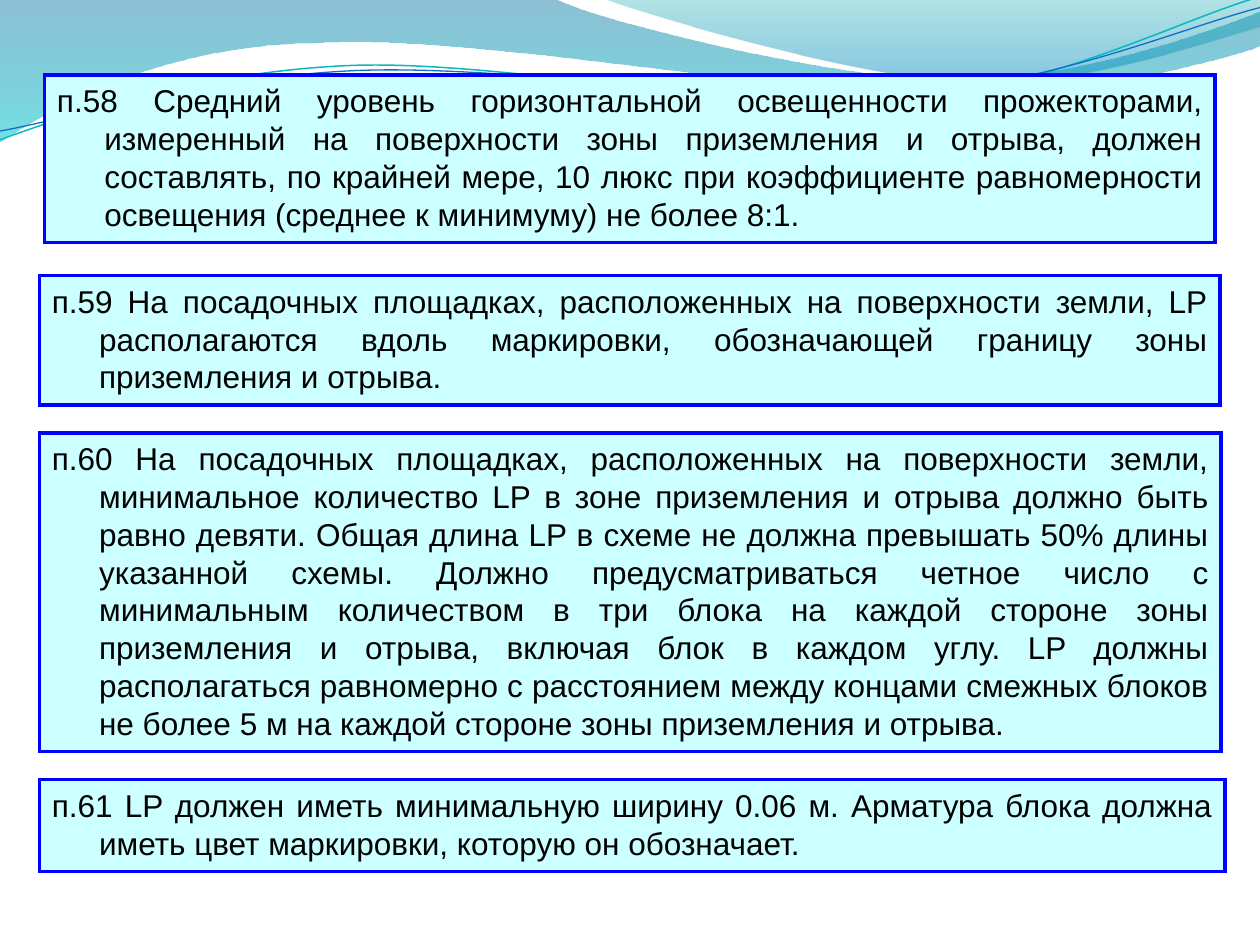
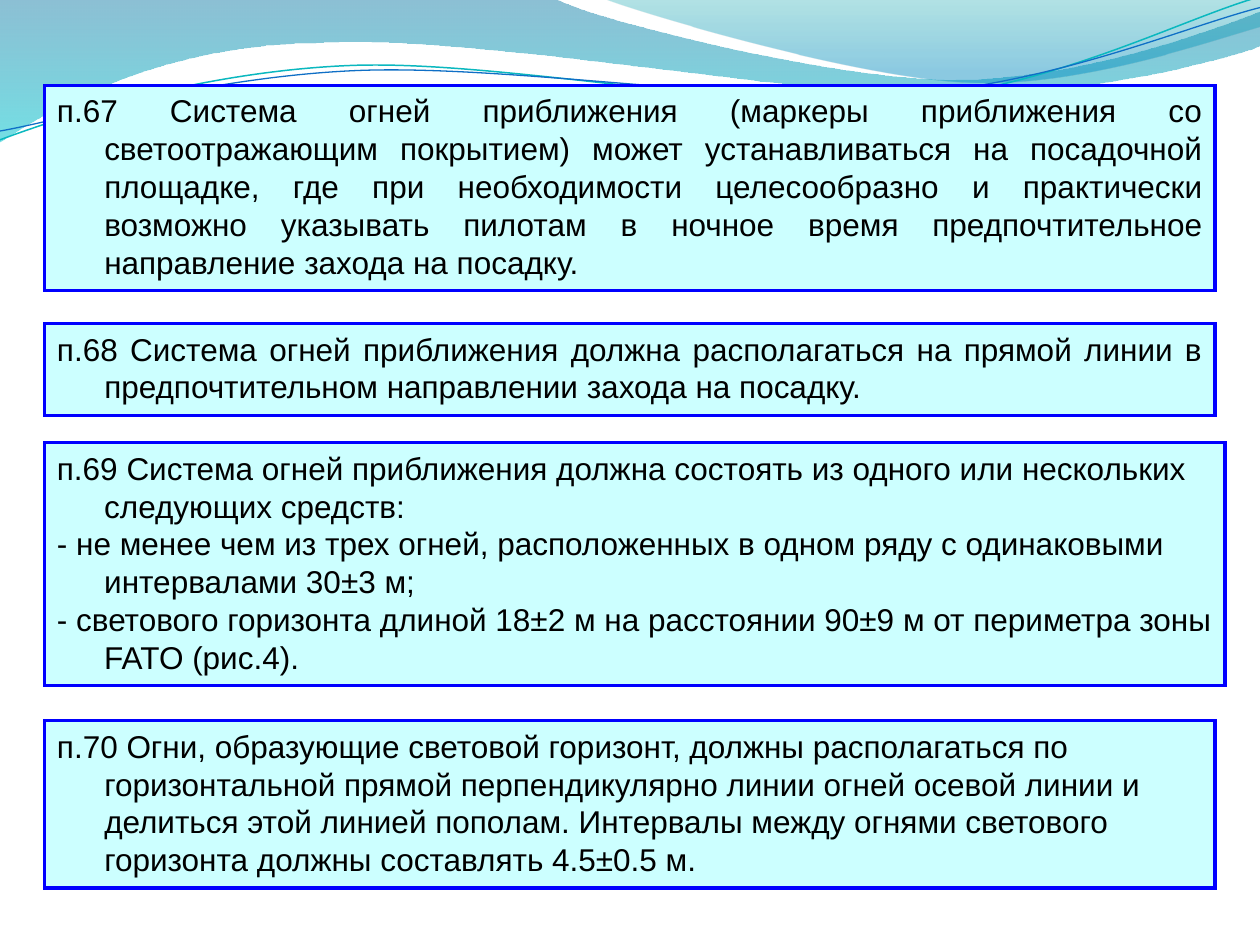
import math
from dataclasses import dataclass
from typing import Optional

from lxml import etree
from pptx import Presentation
from pptx import util as u
from pptx.dml.color import RGBColor
from pptx.enum import shapes, text
from pptx.oxml.ns import qn

SLIDE_WIDTH, SLIDE_HEIGHT = u.Inches(10), u.Inches(7.5)
COLUMN, ROW = SLIDE_WIDTH / 100, SLIDE_HEIGHT / 75
BLANK_LAYOUT = 6

FONT_NAME = "Arial"
FONT_SIZE = 18
HANGING_INDENT = 3.75
LINE_TILT = -2.7

BLACK = RGBColor(0x00, 0x00, 0x00)
BOX_FILL = RGBColor(0xCC, 0xFF, 0xFF)
BOX_BORDER = RGBColor(0x00, 0x00, 0xFF)
DEEP_BLUE = RGBColor(0x00, 0x74, 0xA1)
AQUA = RGBColor(0x00, 0xC6, 0xCF)
TEAL = RGBColor(0x00, 0xA1, 0xA9)
SKY = RGBColor(0x00, 0x8B, 0xBF)
TEAL_LINE = RGBColor(0x0A, 0xB8, 0xBF)
BLUE_LINE = RGBColor(0x0F, 0x6F, 0xC6)

JUSTIFY = text.PP_ALIGN.JUSTIFY
LEFT = text.PP_ALIGN.LEFT


@dataclass(frozen=True)
class GradientStop:
    color: RGBColor
    position: float
    opacity: int


@dataclass(frozen=True)
class Wave:
    start: tuple[float, float]
    segments: list[tuple[float, ...]]
    gradient: tuple[GradientStop, ...] = ()
    line_color: Optional[RGBColor] = None
    line_width: float = 0
    tilt: float = 0
    center: tuple[float, float] = (0, 0)


@dataclass(frozen=True)
class Clause:
    column: float
    row: float
    columns: float
    rows: float
    paragraphs: tuple[str, ...]
    alignment: text.PP_ALIGN = JUSTIFY


WAVES = [
    Wave(
        (0, -0.1),
        [
            (44, -0.1),
            (47.6, 1.7, 66.4, 6.3, 75.8, 6.3),
            (85.3, 6.3, 95.8, 2.6, 100, 0.9),
            (100.1, 3.6),
            (98.3, 4.4, 87, 7.6, 74.6, 7.5),
            (62.2, 7.5, 38.2, 2.8, 25.7, 3.4),
            (12.9, 3.5, 4.6, 8.3, -0.1, 11.3),
            (0, -0.1),
        ],
        gradient=(GradientStop(DEEP_BLUE, 0, 45), GradientStop(AQUA, 1, 55)),
    ),
    Wave(
        (47.9, -0.1),
        [
            (50.9, 1.1, 68.2, 6.2, 76.9, 6.5),
            (85.6, 6.9, 96.1, 3.2, 100, 2.1),
            (100, 0),
            (47.9, -0.1),
        ],
        gradient=(GradientStop(TEAL, 0, 30), GradientStop(SKY, 0.8, 45)),
    ),
    Wave(
        (0, 11.1),
        [
            (4.8, 9.3, 15.8, 5.7, 27.7, 5.2),
            (39.5, 4.7, 59.3, 8.9, 71.3, 8),
            (83.3, 7.1, 93.8, 1.5, 99.8, -0.2),
        ],
        line_color=TEAL_LINE,
        line_width=0.85,
        tilt=LINE_TILT,
        center=(49.9, 5.75),
    ),
    Wave(
        (0, 10.4),
        [
            (4.7, 9.6, 16.4, 6.1, 28.3, 5.6),
            (40.3, 5.1, 59.7, 8.3, 71.7, 7.5),
            (83.6, 6.7, 94.1, 2.1, 100, 0.6),
        ],
        line_color=BLUE_LINE,
        line_width=0.75,
        tilt=LINE_TILT,
        center=(49.95, 5.9),
    ),
]

SLIDES = [
    [
        Clause(3.54, 5.95, 92.9, 13.3, (
            "п.58 Средний уровень горизонтальной освещенности прожекторами, измеренный на "
            "поверхности зоны приземления и отрыва, должен составлять, по крайней мере, 10 люкс "
            "при коэффициенте равномерности освещения (среднее к минимуму) не более 8:1.",
        )),
        Clause(3.13, 21.87, 93.7, 10.3, (
            "п.59 На посадочных площадках, расположенных на поверхности земли, LP располагаются "
            "вдоль маркировки, обозначающей границу зоны приземления и отрыва.",
        )),
        Clause(3.13, 34.37, 93.8, 25.3, (
            "п.60 На посадочных площадках, расположенных на поверхности земли, минимальное "
            "количество LP в зоне приземления и отрыва должно быть равно девяти. Общая длина LP "
            "в схеме не должна превышать 50% длины указанной схемы. Должно предусматриваться "
            "четное число с минимальным количеством в три блока на каждой стороне зоны "
            "приземления и отрыва, включая блок в каждом углу. LP должны располагаться "
            "равномерно с расстоянием между концами смежных блоков не более 5 м на каждой "
            "стороне зоны приземления и отрыва.",
        )),
        Clause(3.13, 61.87, 94.1, 7.3, (
            "п.61 LP должен иметь минимальную ширину 0.06 м. Арматура блока должна иметь цвет "
            "маркировки, которую он обозначает.",
        )),
    ],
    [
        Clause(3.54, 6.77, 92.9, 16.3, (
            "п.67 Система огней приближения (маркеры приближения со светоотражающим покрытием) "
            "может устанавливаться на посадочной площадке, где при необходимости целесообразно "
            "и практически возможно указывать пилотам в ночное время предпочтительное "
            "направление захода на посадку.",
        )),
        Clause(3.54, 25.67, 92.9, 7.3, (
            "п.68 Система огней приближения должна располагаться на прямой линии в "
            "предпочтительном направлении захода на посадку.",
        )),
        Clause(3.54, 35.13, 93.7, 19.3, (
            "п.69 Система огней приближения должна состоять из одного или нескольких следующих "
            "средств:",
            "- не менее чем из трех огней, расположенных в одном ряду с одинаковыми интервалами "
            "30±3 м;",
            "- светового горизонта длиной 18±2 м на расстоянии 90±9 м от периметра зоны FATO "
            "(рис.4).",
        ), LEFT),
        Clause(3.54, 57.2, 92.9, 13.3, (
            "п.70 Огни, образующие световой горизонт, должны располагаться по горизонтальной "
            "прямой перпендикулярно линии огней осевой линии и делиться этой линией пополам. "
            "Интервалы между огнями светового горизонта должны составлять 4.5±0.5 м.",
        ), LEFT),
    ],
]


def across(columns: float) -> int:
    return round(columns * COLUMN)


def down(rows: float) -> int:
    return round(rows * ROW)


def untilted_points(wave: Wave) -> list[tuple[int, int]]:
    points = [wave.start]
    for segment in wave.segments:
        points.extend(zip(segment[::2], segment[1::2]))
    sine, cosine = math.sin(math.radians(-wave.tilt)), math.cos(math.radians(-wave.tilt))
    middle_x, middle_y = wave.center
    offsets = [(x - middle_x, y - middle_y) for x, y in points]
    return [
        (across(middle_x + x * cosine - y * sine), down(middle_y + x * sine + y * cosine))
        for x, y in offsets
    ]


def bend_segments(shape, segments: list[tuple[float, ...]]) -> None:
    lines = iter(list(shape._element.spPr.iter(qn("a:lnTo"))))
    for segment in segments:
        first = next(lines)
        if len(segment) == 6:
            first.tag = qn("a:cubicBezTo")
            for extra in (next(lines), next(lines)):
                first.append(extra[0])
                extra.getparent().remove(extra)


def apply_gradient(shape, gradient: tuple[GradientStop, ...]) -> None:
    shape.fill.gradient()
    shape.fill.gradient_angle = 270
    for stop, setting in zip(shape.fill.gradient_stops, gradient):
        stop.color.rgb = setting.color
        stop.position = setting.position
    colors = shape._element.spPr.iterfind(f".//{qn('a:gs')}/{qn('a:srgbClr')}")
    for color, setting in zip(colors, gradient):
        etree.SubElement(color, qn("a:alpha")).set("val", str(setting.opacity * 1000))


def draw_wave(slide, wave: Wave):
    start, *points = untilted_points(wave)
    builder = slide.shapes.build_freeform(*start)
    builder.add_line_segments(points, close=bool(wave.gradient))
    shape = builder.convert_to_shape()
    bend_segments(shape, wave.segments)
    shape.rotation = wave.tilt
    shape.shadow.inherit = False
    if wave.gradient:
        apply_gradient(shape, wave.gradient)
        shape.line.fill.background()
    else:
        shape.fill.background()
        shape.line.color.rgb = wave.line_color
        shape.line.width = u.Pt(wave.line_width)
    return shape


def add_waves_to_master(slide) -> None:
    master_tree = slide.slide_layout.slide_master.shapes._spTree
    for index, wave in enumerate(WAVES, start=2):
        master_tree.insert(index, draw_wave(slide, wave)._element)


def write_paragraph(paragraph, content: str, *, alignment=LEFT, size: float = FONT_SIZE,
                    color: RGBColor = BLACK, hanging: float = HANGING_INDENT) -> None:
    properties = paragraph._p.get_or_add_pPr()
    properties.set("marL", str(across(hanging)))
    properties.set("indent", str(-across(hanging)))
    paragraph.alignment = alignment
    run = paragraph.add_run()
    run.text = content
    run.font.name = FONT_NAME
    run.font.size = u.Pt(size)
    run.font.color.rgb = color


def draw_clause(slide, clause: Clause) -> None:
    shape = slide.shapes.add_shape(
        shapes.MSO_SHAPE.RECTANGLE,
        across(clause.column), down(clause.row), across(clause.columns), down(clause.rows),
    )
    shape.shadow.inherit = False
    shape.fill.solid()
    shape.fill.fore_color.rgb = BOX_FILL
    shape.line.color.rgb = BOX_BORDER
    shape.line.width = u.Pt(2)
    etree.SubElement(shape.line._ln, qn("a:miter")).set("lim", "800000")
    frame = shape.text_frame
    frame.word_wrap = True
    frame.auto_size = text.MSO_AUTO_SIZE.SHAPE_TO_FIT_TEXT
    frame.vertical_anchor = text.MSO_ANCHOR.TOP
    for index, content in enumerate(clause.paragraphs):
        paragraph = frame.add_paragraph() if index else frame.paragraphs[0]
        write_paragraph(paragraph, content, alignment=clause.alignment)


def main() -> None:
    presentation = Presentation()
    presentation.slide_width, presentation.slide_height = SLIDE_WIDTH, SLIDE_HEIGHT
    layout = presentation.slide_layouts[BLANK_LAYOUT]
    for number, clauses in enumerate(SLIDES):
        slide = presentation.slides.add_slide(layout)
        if number == 0:
            add_waves_to_master(slide)
        for clause in reversed(clauses):
            draw_clause(slide, clause)
    presentation.save("out.pptx")


if __name__ == "__main__":
    main()
